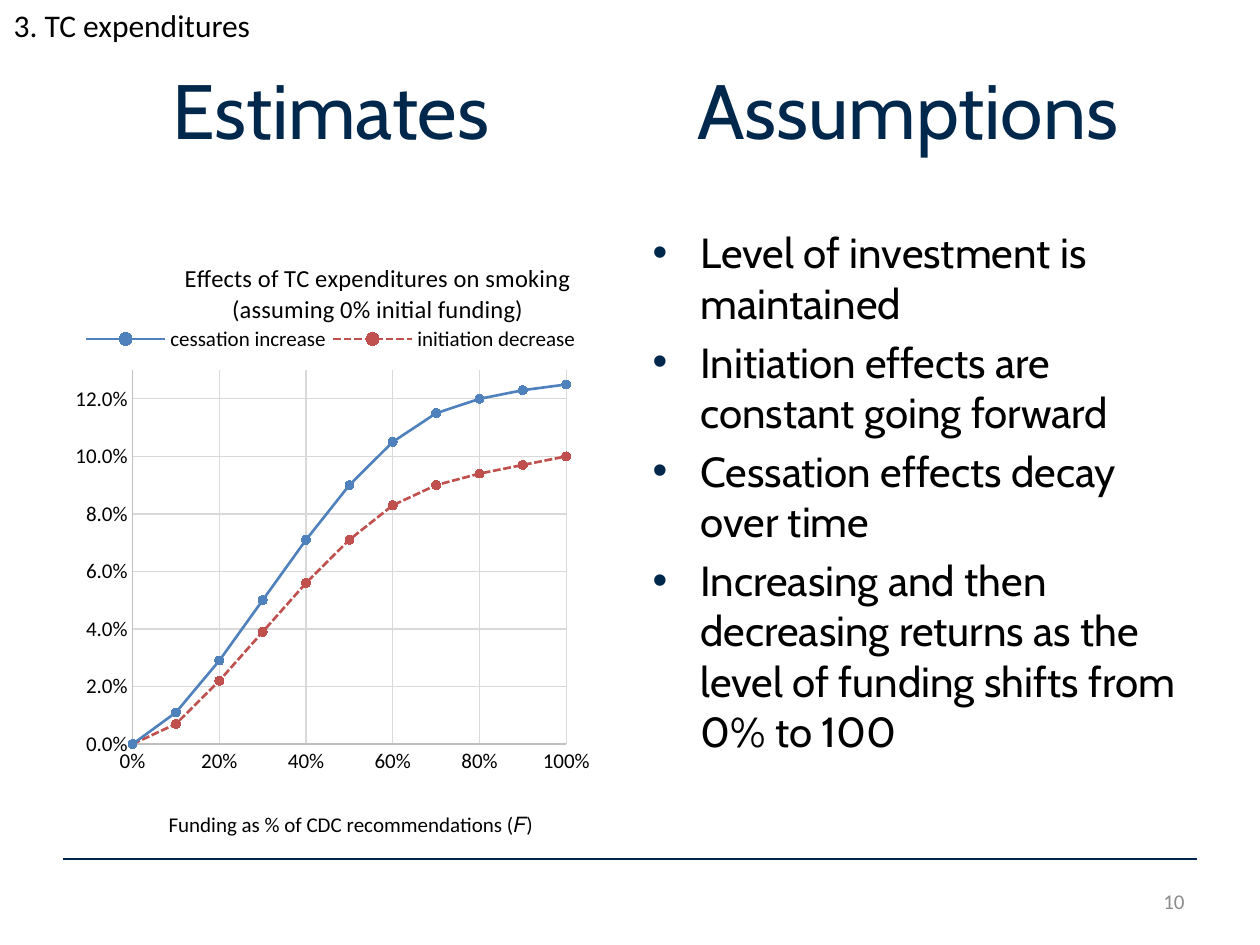
from dataclasses import dataclass

from lxml import etree
from pptx import Presentation
from pptx import util as u
from pptx.chart import data
from pptx.dml import color
from pptx.enum import chart as ch, dml, shapes, text
from pptx.oxml import ns


@dataclass(frozen=True)
class Theme:
    """Colours, fonts and type sizes of the slide."""
    navy: str = "00274C"
    ink: str = "000000"
    gray: str = "8C8C8C"
    axis: str = "BFBFBF"
    grid: str = "D9D9D9"
    blue: str = "4F81BD"
    red: str = "C0504D"
    head: str = "Cabin"
    base: str = "Calibri"
    big: int = 44
    list: int = 24
    tag: int = 18
    title: int = 14
    small: int = 12


T = Theme()
MID, LEFT, RIGHT = text.PP_ALIGN.CENTER, text.PP_ALIGN.LEFT, text.PP_ALIGN.RIGHT


def rgb(code):
    """Turn a hex code into a colour."""
    return color.RGBColor.from_string(code)


def style(font, size, tint=T.ink, face=T.base):
    """Format a font."""
    font.size, font.name, font.bold = u.Pt(size), face, False
    font.color.rgb = rgb(tint)


def stroke(line, tint, width):
    """Format a line."""
    line.color.rgb, line.width = rgb(tint), u.Pt(width)


def write(frame, words, align=None, bullet=None, **look):
    """Fill a text frame with one paragraph per line of words."""
    frame.text = words
    for i, para in enumerate(frame.paragraphs):
        if bullet:
            mark(para, bullet)
        if align is not None:
            para.alignment = align
        if i == 0:
            para.space_before = u.Pt(0)
        style(para.font, **look)
        for run in para.runs:
            style(run.font, **look)


def mark(para, tint):
    """Give a paragraph a hanging coloured bullet."""
    props = para._p.get_or_add_pPr()
    hang = u.Inches(0.38)
    props.set("marL", str(hang))
    props.set("indent", str(-hang))
    fill = etree.SubElement(props, ns.qn("a:buClr"))
    etree.SubElement(fill, ns.qn("a:srgbClr"), val=tint)
    etree.SubElement(props, ns.qn("a:buFont"), typeface="Arial")
    etree.SubElement(props, ns.qn("a:buChar"), char="•")


def place(shape, box):
    """Move a shape to a box in inches."""
    shape.left, shape.top, shape.width, shape.height = map(u.Inches, box)


def label(slide, box, words, wrap=True, **look):
    """Add a text box centred vertically on its box."""
    frame = slide.shapes.add_textbox(*map(u.Inches, box)).text_frame
    frame.word_wrap = wrap
    frame.vertical_anchor = text.MSO_ANCHOR.MIDDLE
    write(frame, words, **look)


def heads(slide, boxes):
    """Set the title and the matching heading of the right column."""
    look = dict(align=MID, size=T.big, tint=T.navy, face=T.head)
    title = slide.shapes.title
    place(title, boxes[0])
    title.text_frame.vertical_anchor = text.MSO_ANCHOR.MIDDLE
    write(title.text_frame, "Estimates", **look)
    label(slide, boxes[1], "Assumptions", **look)


def points(slide, box):
    """Set the list of assumptions in the body placeholder."""
    body = slide.placeholders[1]
    place(body, box)
    body.text_frame.auto_size = text.MSO_AUTO_SIZE.NONE
    lines = ("Level of investment is maintained",
             "Initiation effects are constant going forward",
             "Cessation effects decay over time",
             "Increasing and then decreasing returns as the level of funding shifts from 0% to 100")
    write(body.text_frame, "\n".join(lines), bullet=T.navy, size=T.list, face=T.head)


def pin(node, index, target=None, **spots):
    """Fix a chart part at fractions of the chart area."""
    for old in node.findall(ns.qn("c:layout")):
        node.remove(old)
    layout = etree.Element(ns.qn("c:layout"))
    manual = etree.SubElement(layout, ns.qn("c:manualLayout"))
    if target:
        etree.SubElement(manual, ns.qn("c:layoutTarget"), val=target)
    for side in "xy":
        etree.SubElement(manual, ns.qn(f"c:{side}Mode"), val="edge")
    for side, spot in spots.items():
        etree.SubElement(manual, ns.qn(f"c:{side}"), val=str(spot))
    node.insert(index, layout)


def scale(axis, top, step, form):
    """Format one axis of the chart."""
    axis.minimum_scale, axis.maximum_scale, axis.major_unit = 0, top, step
    axis.major_tick_mark = axis.minor_tick_mark = ch.XL_TICK_MARK.NONE
    axis.has_major_gridlines = True
    stroke(axis.major_gridlines.format.line, T.grid, 0.75)
    stroke(axis.format.line, T.axis, 0.75)
    axis.tick_labels.number_format = form
    axis.tick_labels.number_format_is_linked = False
    style(axis.tick_labels.font, T.small)


def graph(slide, box):
    """Add the scatter chart of effects by funding level."""
    sets = (("cessation increase", T.blue, None,
             (0, 0.011, 0.029, 0.05, 0.071, 0.09, 0.105, 0.115, 0.12, 0.123, 0.125)),
            ("initiation decrease", T.red, dml.MSO_LINE.SQUARE_DOT,
             (0, 0.007, 0.022, 0.039, 0.056, 0.071, 0.083, 0.09, 0.094, 0.097, 0.1)))
    table = data.XyChartData()
    for name, _, _, vals in sets:
        row = table.add_series(name)
        for i, val in enumerate(vals):
            row.add_data_point(i / 10, val)
    chart = slide.shapes.add_chart(
        ch.XL_CHART_TYPE.XY_SCATTER_SMOOTH, *map(u.Inches, box), table).chart
    style(chart.font, T.small)
    chart.plots[0].vary_by_categories = False

    for line, (_, tint, dash, _) in zip(chart.plots[0].series, sets):
        line.smooth = True
        stroke(line.format.line, tint, 1.5)
        if dash:
            line.format.line.dash_style = dash
        line.marker.style, line.marker.size = ch.XL_MARKER_STYLE.CIRCLE, 5
        line.marker.format.fill.solid()
        line.marker.format.fill.fore_color.rgb = rgb(tint)
        stroke(line.marker.format.line, tint, 0.75)

    scale(chart.category_axis, 1, 0.2, "0%")
    scale(chart.value_axis, 0.13, 0.02, "0.0%")
    chart.has_title = True
    write(chart.chart_title.text_frame,
          "Effects of TC expenditures on smoking\n(assuming 0% initial funding)",
          align=MID, size=T.title)
    name = chart.category_axis.axis_title
    write(name.text_frame, "Funding as % of CDC recommendations (𝐹)", size=T.small)
    chart.has_legend = True
    chart.legend.position = ch.XL_LEGEND_POSITION.TOP
    chart.legend.include_in_layout = False
    style(chart.legend.font, T.small)

    pin(chart.chart_title._element, 1, x=0.22, y=0.06)
    pin(name._element, 1, x=0.19, y=0.94)
    pin(chart.legend._element, 1, x=0.03, y=0.17, w=0.94, h=0.04)
    area = chart._chartSpace.find(".//" + ns.qn("c:plotArea"))
    pin(area, 0, "inner", x=0.13, y=0.24, w=0.81, h=0.6)


def foot(slide, box):
    """Draw the rule and the page number below it."""
    left, top, wide, high = box
    rule = slide.shapes.add_connector(
        shapes.MSO_CONNECTOR.STRAIGHT, *map(u.Inches, (left, top, left + wide, top)))
    stroke(rule.line, T.navy, 1)
    etree.SubElement(rule._element.spPr, ns.qn("a:effectLst"))
    label(slide, (left + wide - 2.33, top + high - 0.4, 2.33, 0.4), "10",
          align=RIGHT, size=T.small, tint=T.gray)


def main():
    """Build the slide and save it."""
    deck = Presentation()
    deck.slide_width, deck.slide_height = u.Inches(10), u.Inches(7.5)
    slide = deck.slides.add_slide(deck.slide_layouts[1])
    cols = (0.5, 5.08)
    foot(slide, (0.5, 6.82, 9, 0.53))
    heads(slide, [(x, 0.3, 4.25, 1.12) for x in cols])
    points(slide, (cols[1], 1.75, 4.42, 4.95))
    label(slide, (0.01, 0, 2.1, 0.4), "3. TC expenditures", wrap=False,
          align=LEFT, size=T.tag)
    graph(slide, (cols[0], 1.75, 4.25, 4.95))
    deck.save("out.pptx")


if __name__ == "__main__":
    main()
